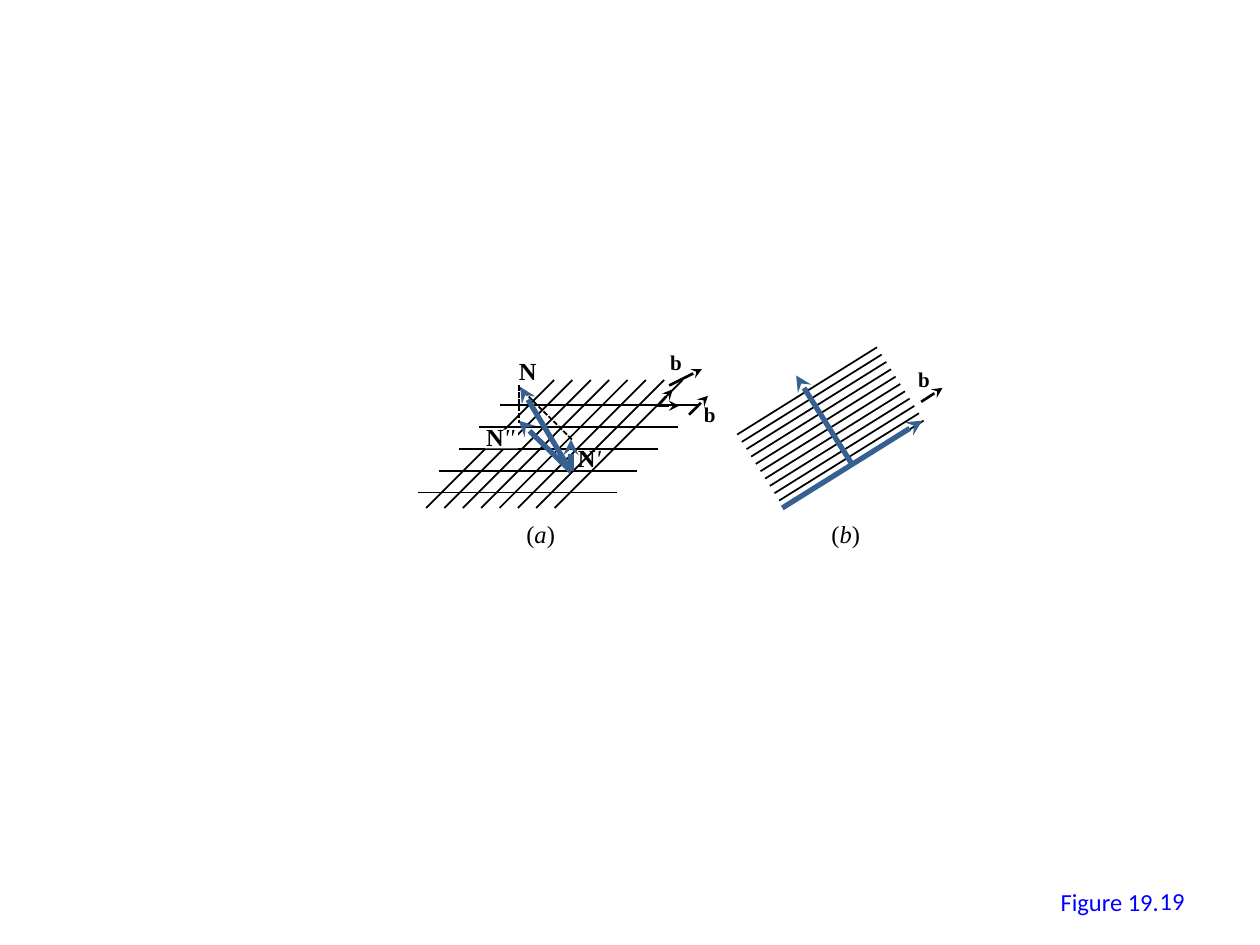
from lxml import etree
from pptx import Presentation
from pptx.dml.color import RGBColor
from pptx.enum.dml import MSO_LINE
from pptx.enum.shapes import MSO_CONNECTOR, MSO_SHAPE
from pptx.enum.text import MSO_ANCHOR, MSO_AUTO_SIZE, PP_ALIGN
from pptx.oxml.ns import qn
from pptx.util import Cm, Pt

STRAIGHT = MSO_CONNECTOR.STRAIGHT
RECTANGLE = MSO_SHAPE.RECTANGLE
DASHED = MSO_LINE.SQUARE_DOT
MIDDLE = MSO_ANCHOR.MIDDLE
GROW = MSO_AUTO_SIZE.SHAPE_TO_FIT_TEXT
NO_FIT = MSO_AUTO_SIZE.NONE
RIGHT = PP_ALIGN.RIGHT

BLACK = RGBColor(0x00, 0x00, 0x00)
WHITE = RGBColor(0xFF, 0xFF, 0xFF)
NAVY = RGBColor(0x37, 0x60, 0x92)
BLUE = RGBColor(0x00, 0x00, 0xFF)

PLAIN = {"name": "Times New Roman", "size": Pt(14), "bold": False, "italic": False}
BOLD = {**PLAIN, "bold": True}
SMALL_BOLD = {**BOLD, "size": Pt(12)}
ITALIC = {**PLAIN, "italic": True}
CAPTION = {**PLAIN, "name": "Calibri"}


def add_line(slide, start, end, color=BLACK, width=1, dash=None):
    line = slide.shapes.add_connector(STRAIGHT, *(Cm(v) for v in (*start, *end)))
    line.line.color.rgb = color
    line.line.width = Pt(width)
    if dash is not None:
        line.line.dash_style = dash
    etree.SubElement(line._element.spPr, qn("a:effectLst"))
    return line


def add_arrow(slide, start, end, color=BLACK, width=1.5):
    arrow = add_line(slide, start, end, color, width)
    outline = arrow.line._get_or_add_ln()
    etree.SubElement(outline, qn("a:tailEnd"), type="stealth")


def add_vector(slide, start, end):
    add_arrow(slide, start, end, NAVY, 3)


def add_line_family(slide, start, step, span, count):
    """Draw parallel lines, each shifted by step from the one before."""
    for i in range(count):
        x, y = start[0] + i * step[0], start[1] + i * step[1]
        add_line(slide, (x, y), (x + span[0], y + span[1]))


def add_label(slide, box, runs, color=BLACK, wrap=False):
    label = slide.shapes.add_textbox(*(Cm(v) for v in box))
    frame = label.text_frame
    frame.word_wrap = wrap
    frame.auto_size = NO_FIT if wrap else GROW
    for text, style in runs:
        run = frame.paragraphs[0].add_run()
        run.text = text
        run.font.color.rgb = color
        for attribute, value in style.items():
            setattr(run.font, attribute, value)
    return frame


def add_burgers_label(slide, x, y):
    add_label(slide, (x, y, 0.76, 0.76), [("b", SMALL_BOLD)])


def add_panel_label(slide, x, letter):
    add_label(slide, (x, 10.34, 1.09, 0.86), [("(", PLAIN), (letter, ITALIC), (")", PLAIN)])


def add_mask(slide, box):
    mask = slide.shapes.add_shape(RECTANGLE, *(Cm(v) for v in box))
    mask.shadow.inherit = False
    mask.fill.solid()
    mask.fill.fore_color.rgb = WHITE
    mask.line.fill.background()


def draw_single_array(slide):
    # Dislocation lines with the boundary axis and its normal
    add_line_family(slide, (14.86, 8.76), (0.094, 0.148), (2.82, -1.76), 11)
    add_vector(slide, (15.77, 10.24), (18.59, 8.48))
    add_vector(slide, (17.17, 9.35), (16.05, 7.57))
    # Burgers vector
    add_burgers_label(slide, 18.26, 7.26)
    add_arrow(slide, (18.57, 8.1), (19, 7.82))
    add_panel_label(slide, 16.51, "b")


def draw_crossed_arrays(slide):
    # Two crossing sets of dislocation lines
    add_line_family(slide, (8.43, 9.93), (0.41, -0.44), (4.01, 0), 5)
    add_line_family(slide, (8.59, 10.24), (0.37, 0), (2.58, -2.58), 8)

    # Components of N and the dashed parallelogram
    origin = (11.51, 9.5)
    add_vector(slide, origin, (11.51, 8.86))
    add_vector(slide, origin, (10.46, 8.48))
    add_line(slide, (10.46, 7.77), (10.46, 8.53), dash=DASHED)
    add_line(slide, (10.46, 7.8), (11.53, 8.86), dash=DASHED)

    # Burgers vectors and line directions
    add_arrow(slide, (13.89, 8.36), (14.27, 7.98))
    add_arrow(slide, (13.49, 7.77), (14.15, 7.44))
    add_burgers_label(slide, 13.94, 7.98)
    add_burgers_label(slide, 13.26, 6.93)
    add_arrow(slide, (13.26, 8.18), (13.56, 7.85))
    add_arrow(slide, (13.21, 8.18), (13.69, 8.18))

    # Vector names, with the lines cleared behind N''
    add_label(slide, (10.21, 7.06, 0.86, 0.86), [("N", BOLD)])
    add_label(slide, (11.4, 8.81, 1.02, 0.86), [("N", BOLD), ("'", ITALIC)])
    add_mask(slide, (9.78, 8.66, 0.66, 0.38))
    add_label(slide, (9.55, 8.38, 1.14, 0.86), [("N", BOLD), ("''", ITALIC)])
    add_panel_label(slide, 10.36, "a")
    add_vector(slide, origin, (10.49, 7.8))


def add_figure_number(slide):
    add_label(slide, (21.13, 17.75, 2.51, 0.86), [("Figure 19.", CAPTION)], BLUE)
    number = add_label(slide, (18.21, 17.65, 5.92, 1.02), [("19", CAPTION)], BLUE, wrap=True)
    number.vertical_anchor = MIDDLE
    number.paragraphs[0].alignment = RIGHT


def main():
    presentation = Presentation()
    presentation.slide_width = Cm(25.4)
    presentation.slide_height = Cm(19.05)
    slide = presentation.slides.add_slide(presentation.slide_layouts[6])
    draw_single_array(slide)
    draw_crossed_arrays(slide)
    add_figure_number(slide)
    presentation.save("out.pptx")


if __name__ == "__main__":
    main()
